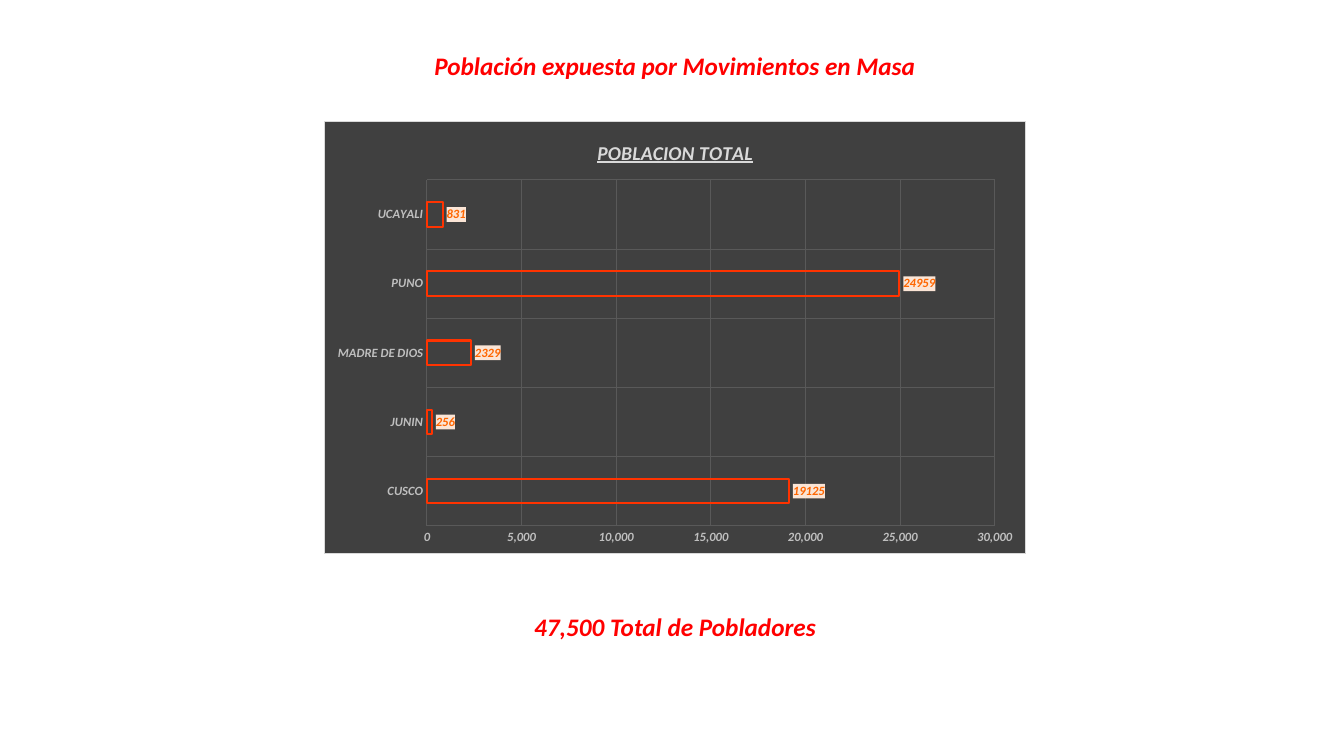
from dataclasses import dataclass

from pptx import Presentation
from pptx.chart.axis import CategoryAxis, ValueAxis
from pptx.chart.chart import Chart
from pptx.chart.data import CategoryChartData
from pptx.dml.color import RGBColor
from pptx.enum.chart import XL_CHART_TYPE, XL_LABEL_POSITION, XL_TICK_MARK
from pptx.enum.text import MSO_AUTO_SIZE, PP_ALIGN
from pptx.oxml import parse_xml
from pptx.oxml.ns import nsdecls, qn
from pptx.slide import Slide
from pptx.text.text import Font
from pptx.util import Pt

BAR_CLUSTERED = XL_CHART_TYPE.BAR_CLUSTERED
OUTSIDE_END = XL_LABEL_POSITION.OUTSIDE_END
NO_TICK = XL_TICK_MARK.NONE
FIT_SHAPE = MSO_AUTO_SIZE.SHAPE_TO_FIT_TEXT
CENTER = PP_ALIGN.CENTER

FONT = "Calibri"
COLORS = {
    "heading": "FF0000",
    "panel": "404040",
    "border": "D9D9D9",
    "title": "D9D9D9",
    "axis": "BFBFBF",
    "grid": "595959",
    "bar": "FF3300",
    "label": "FF6600",
    "label_fill": "FBE5D6",
}
POPULATION = {
    "CUSCO": 19125,
    "JUNIN": 256,
    "MADRE DE DIOS": 2329,
    "PUNO": 24959,
    "UCAYALI": 831,
}
PLOT_LAYOUT = {"x": 0.146, "y": 0.135, "w": 0.81, "h": 0.8}


@dataclass
class Heading:
    text: str
    left: float
    top: float
    width: float
    wrap: bool


HEADINGS = [
    Heading("Población expuesta por Movimientos en Masa", 301, 32.4, 362, False),
    Heading("47,500 Total de Pobladores", 362, 433.4, 240.5, True),
]


def style_font(font: Font, size: float, color: str) -> None:
    font.name = FONT
    font.size = Pt(size)
    font.bold = True
    font.italic = True
    font.color.rgb = RGBColor.from_string(COLORS[color])


def add_heading(slide: Slide, heading: Heading) -> None:
    box = slide.shapes.add_textbox(
        Pt(heading.left), Pt(heading.top), Pt(heading.width), Pt(29)
    )
    frame = box.text_frame
    frame.word_wrap = heading.wrap
    frame.auto_size = FIT_SHAPE
    para = frame.paragraphs[0]
    para.text = heading.text
    para.alignment = CENTER
    style_font(para.font, 18, "heading")


def style_axis(axis: CategoryAxis | ValueAxis) -> None:
    axis.major_tick_mark = NO_TICK
    axis.minor_tick_mark = NO_TICK
    axis.format.line.fill.background()
    axis.has_major_gridlines = True
    grid = axis.major_gridlines.format.line
    grid.width = Pt(0.75)
    grid.color.rgb = RGBColor.from_string(COLORS["grid"])
    style_font(axis.tick_labels.font, 9, "axis")


def shape_properties(fill: str, line: str = ""):
    """Return a chart spPr element with a solid fill and an optional thin line."""
    outline = "<a:ln><a:noFill/></a:ln>"
    if line:
        outline = (
            f'<a:ln w="{Pt(0.75)}"><a:solidFill><a:srgbClr val="{COLORS[line]}"/>'
            "</a:solidFill></a:ln>"
        )
    return parse_xml(
        f'<c:spPr {nsdecls("c", "a")}><a:solidFill>'
        f'<a:srgbClr val="{COLORS[fill]}"/></a:solidFill>{outline}</c:spPr>'
    )


def place_plot(chart: Chart) -> None:
    plot_area = chart.element.find(f'{qn("c:chart")}/{qn("c:plotArea")}')
    for layout in plot_area.findall(qn("c:layout")):
        plot_area.remove(layout)
    sizes = "".join(f'<c:{key} val="{value}"/>' for key, value in PLOT_LAYOUT.items())
    plot_area.insert(0, parse_xml(
        f'<c:layout {nsdecls("c")}><c:manualLayout><c:layoutTarget val="inner"/>'
        f'<c:xMode val="edge"/><c:yMode val="edge"/>{sizes}'
        "</c:manualLayout></c:layout>"
    ))


def style_bars(chart: Chart) -> None:
    plot = chart.plots[0]
    plot.gap_width = 182
    plot.overlap = -50
    plot.vary_by_categories = False
    series = plot.series[0]
    series.format.fill.background()
    series.format.line.width = Pt(1.5)
    series.format.line.color.rgb = RGBColor.from_string(COLORS["bar"])
    labels = series.data_labels
    labels.show_value = True
    labels.position = OUTSIDE_END
    style_font(labels.font, 9, "label")
    text_properties = series.format.element.find(f'{qn("c:dLbls")}/{qn("c:txPr")}') \
        if hasattr(series.format, "element") else \
        chart.element.find(f'.//{qn("c:dLbls")}/{qn("c:txPr")}')
    text_properties.addprevious(shape_properties("label_fill"))


def add_population_chart(slide: Slide) -> None:
    data = CategoryChartData(number_format="General")
    data.categories = list(POPULATION)
    data.add_series("Series 1", list(POPULATION.values()))
    chart = slide.shapes.add_chart(
        BAR_CLUSTERED, Pt(231.5), Pt(86.5), Pt(501.5), Pt(309.5), data
    ).chart
    chart.font.name = FONT
    chart.font.size = Pt(10)
    chart.has_legend = False
    chart.has_title = True
    title = chart.chart_title.text_frame.paragraphs[0]
    title.text = "POBLACION TOTAL"
    style_font(title.font, 14, "title")
    title.font.underline = True
    chart.element.find(qn("c:chart")).addnext(shape_properties("panel", "border"))

    style_axis(chart.category_axis)
    style_axis(chart.value_axis)
    chart.value_axis.minimum_scale = 0
    chart.value_axis.maximum_scale = 30000
    chart.value_axis.major_unit = 5000
    chart.value_axis.tick_labels.number_format = "#,##0"
    chart.value_axis.tick_labels.number_format_is_linked = False
    style_bars(chart)
    place_plot(chart)


def main() -> None:
    deck = Presentation()
    deck.slide_width = Pt(960)
    deck.slide_height = Pt(540)
    slide = deck.slides.add_slide(deck.slide_layouts[6])
    for heading in HEADINGS:
        add_heading(slide, heading)
    add_population_chart(slide)
    deck.save("out.pptx")


if __name__ == "__main__":
    main()
